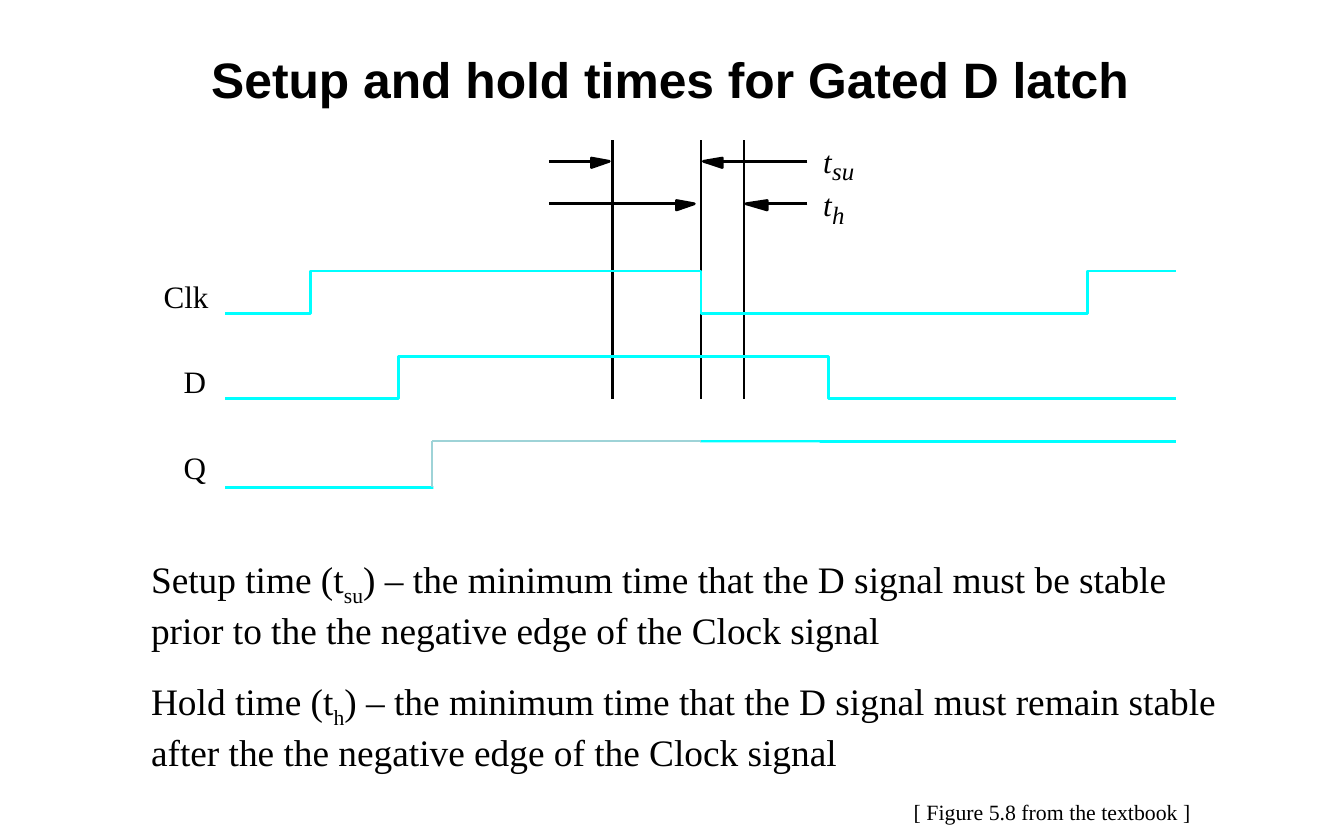
from dataclasses import dataclass

from lxml import etree
from pptx import Presentation
from pptx.dml.color import RGBColor
from pptx.enum.shapes import MSO_CONNECTOR, MSO_SHAPE
from pptx.enum.text import MSO_ANCHOR, MSO_AUTO_SIZE, PP_ALIGN
from pptx.oxml.ns import qn
from pptx.util import Pt

STRAIGHT = MSO_CONNECTOR.STRAIGHT
RECTANGLE = MSO_SHAPE.RECTANGLE
MIDDLE = MSO_ANCHOR.MIDDLE
CENTER = PP_ALIGN.CENTER
FIT = MSO_AUTO_SIZE.SHAPE_TO_FIT_TEXT

BLACK = RGBColor(0x00, 0x00, 0x00)
WHITE = RGBColor(0xFF, 0xFF, 0xFF)
CYAN = RGBColor(0x00, 0xFF, 0xFF)
PALE_CYAN = RGBColor(0x9E, 0xD3, 0xD7)
SERIF = "Times New Roman"
SANS = "Arial"

START, END = 144.7, 756
SETUP_START, CLOCK_EDGE, HOLD_END = 393.8, 450.7, 478.1
GUIDE_TOP, GUIDE_BOTTOM = 90, 256.3
Q_RISE, Q_HIGH, Q_LOW = 277.9, 283.7, 313.2
SETUP_Y, HOLD_Y = 103.7, 131
ARROWS_LEFT, ARROWS_RIGHT = 352.8, 519.1

Point = tuple[float, float]


@dataclass
class Label:
    text: str
    left: float
    top: float
    width: float
    height: float
    size: float = 20
    italic: bool = False


@dataclass
class Arrow:
    tail: float
    base: float
    tip: float
    y: float


@dataclass
class Signal:
    low: float
    high: float
    edges: list[float]
    starts_high: bool = False


@dataclass
class Definition:
    before: str
    subscript: str
    after: str
    second_line: str
    top: float
    width: float


LABELS = [
    Label("t", 529.2, 91.4, 10.8, 24.5, italic=True),
    Label("su", 535, 100.1, 14.4, 19.4, 16, True),
    Label("t", 529.2, 119.5, 10.8, 24.5, italic=True),
    Label("h", 535, 128.2, 12.2, 19.4, 16, True),
    Label("Clk", 105.1, 178.6, 34.6, 24.5),
    Label("D", 118.1, 233.3, 19.4, 24.5),
    Label("Q", 118.1, 288, 19.4, 24.5),
]
ARROWS = [
    Arrow(ARROWS_RIGHT, 464.4, 452.2, SETUP_Y),
    Arrow(ARROWS_LEFT, 380.2, 391.7, SETUP_Y),
    Arrow(ARROWS_RIGHT, 493.2, 479.5, HOLD_Y),
    Arrow(ARROWS_LEFT, 434.9, 446.4, HOLD_Y),
]
SIGNALS = [
    Signal(Q_LOW, Q_HIGH, [CLOCK_EDGE]),
    Signal(201.6, 174.2, [199.4, CLOCK_EDGE, 699.1]),
    Signal(256.3, 229, [256.3, 532.8]),
]
DEFINITIONS = [
    Definition("Setup time (t", "su", ") – the minimum time that the D signal must be stable",
               "prior to the the negative edge of the Clock signal", 354.2, 682.6),
    Definition("Hold time (t", "h", ") – the minimum time that the D signal must remain stable",
               "after the the negative edge of the Clock signal", 432.7, 707),
]


def add_line(shapes, start: Point, end: Point, color: RGBColor, weight: float) -> None:
    line = shapes.add_connector(STRAIGHT, *(Pt(v) for v in start + end))
    line.line.color.rgb = color
    line.line.width = Pt(weight)
    etree.SubElement(line._element.spPr, qn("a:effectLst"))


def add_path(shapes, points: list[Point], color: RGBColor, filled: bool = False) -> None:
    first, *rest = [(Pt(x), Pt(y)) for x, y in points]
    builder = shapes.build_freeform(*first, scale=1.0)
    builder.add_line_segments(rest, close=filled)
    outline = builder.convert_to_shape()
    outline.shadow.inherit = False
    outline.line.color.rgb = color
    outline.line.width = Pt(1.75)
    if filled:
        outline.fill.solid()
        outline.fill.fore_color.rgb = color
    else:
        outline.fill.background()


def add_arrow(shapes, arrow: Arrow) -> None:
    head = [(arrow.base, arrow.y - 2.1), (arrow.tip, arrow.y), (arrow.base, arrow.y + 4)]
    add_path(shapes, head, BLACK, filled=True)
    add_line(shapes, (arrow.tail, arrow.y), (arrow.base, arrow.y), BLACK, 1.75)


def add_signal(shapes, signal: Signal) -> None:
    level, other = signal.low, signal.high
    points = [(START, level)]
    for edge in signal.edges:
        points += [(edge, level), (edge, other)]
        level, other = other, level
    points.append((END, level))
    add_path(shapes, points, CYAN)


def style(paragraph, size: float, name: str = SERIF) -> None:
    paragraph.font.size = Pt(size)
    paragraph.font.name = name
    paragraph.font.color.rgb = BLACK


def add_frame(shapes, left: float, top: float, width: float, height: float):
    frame = shapes.add_textbox(Pt(left), Pt(top), Pt(width), Pt(height)).text_frame
    frame.word_wrap = False
    frame.auto_size = FIT
    return frame


def add_label(shapes, label: Label) -> None:
    frame = add_frame(shapes, label.left, label.top, label.width, label.height)
    frame.margin_left = frame.margin_right = frame.margin_top = frame.margin_bottom = 0
    paragraph = frame.paragraphs[0]
    paragraph.text = label.text
    style(paragraph, label.size)
    paragraph.font.italic = label.italic


def add_definition(shapes, definition: Definition) -> None:
    frame = add_frame(shapes, 90, definition.top, definition.width, 65.5)
    term = frame.paragraphs[0]
    for text in (definition.before, definition.subscript, definition.after):
        run = term.add_run()
        run.text = text
        if text == definition.subscript:
            run.font._element.set("baseline", "-25000")
    continuation = frame.add_paragraph()
    continuation.text = definition.second_line
    for paragraph in frame.paragraphs:
        style(paragraph, 24)


def add_title(shapes, text: str) -> None:
    frame = shapes.add_textbox(Pt(71.3), Pt(23.8), Pt(720), Pt(54)).text_frame
    frame.word_wrap = True
    frame.vertical_anchor = MIDDLE
    title = frame.paragraphs[0]
    title.text = text
    title.alignment = CENTER
    style(title, 32, SANS)
    title.font.bold = True


def main() -> None:
    deck = Presentation()
    deck.slide_width, deck.slide_height = Pt(864), Pt(540)
    shapes = deck.slides.add_slide(deck.slide_layouts[6]).shapes

    for x in (CLOCK_EDGE, SETUP_START, HOLD_END):
        add_line(shapes, (x, GUIDE_BOTTOM), (x, GUIDE_TOP), BLACK, 1.5)
    for arrow in ARROWS:
        add_arrow(shapes, arrow)
    for label in LABELS:
        add_label(shapes, label)
    for signal in SIGNALS:
        add_signal(shapes, signal)

    source = add_frame(shapes, 580.3, 509.8, 193.7, 24.5).paragraphs[0]
    source.text = "[ Figure 5.8 from the textbook ]"
    style(source, 14)
    add_title(shapes, "Setup and hold times for Gated D latch")
    for definition in DEFINITIONS:
        add_definition(shapes, definition)

    add_line(shapes, (Q_RISE, Q_HIGH), (Q_RISE, Q_LOW), PALE_CYAN, 1.5)
    add_line(shapes, (Q_RISE, Q_HIGH), (CLOCK_EDGE, Q_HIGH), PALE_CYAN, 1.5)
    late_edge_cover = shapes.add_shape(RECTANGLE, Pt(278.6), Pt(284.4), Pt(248.4), Pt(46.1))
    late_edge_cover.shadow.inherit = False
    late_edge_cover.fill.solid()
    late_edge_cover.fill.fore_color.rgb = WHITE
    late_edge_cover.line.fill.background()
    deck.save("out.pptx")


if __name__ == "__main__":
    main()
